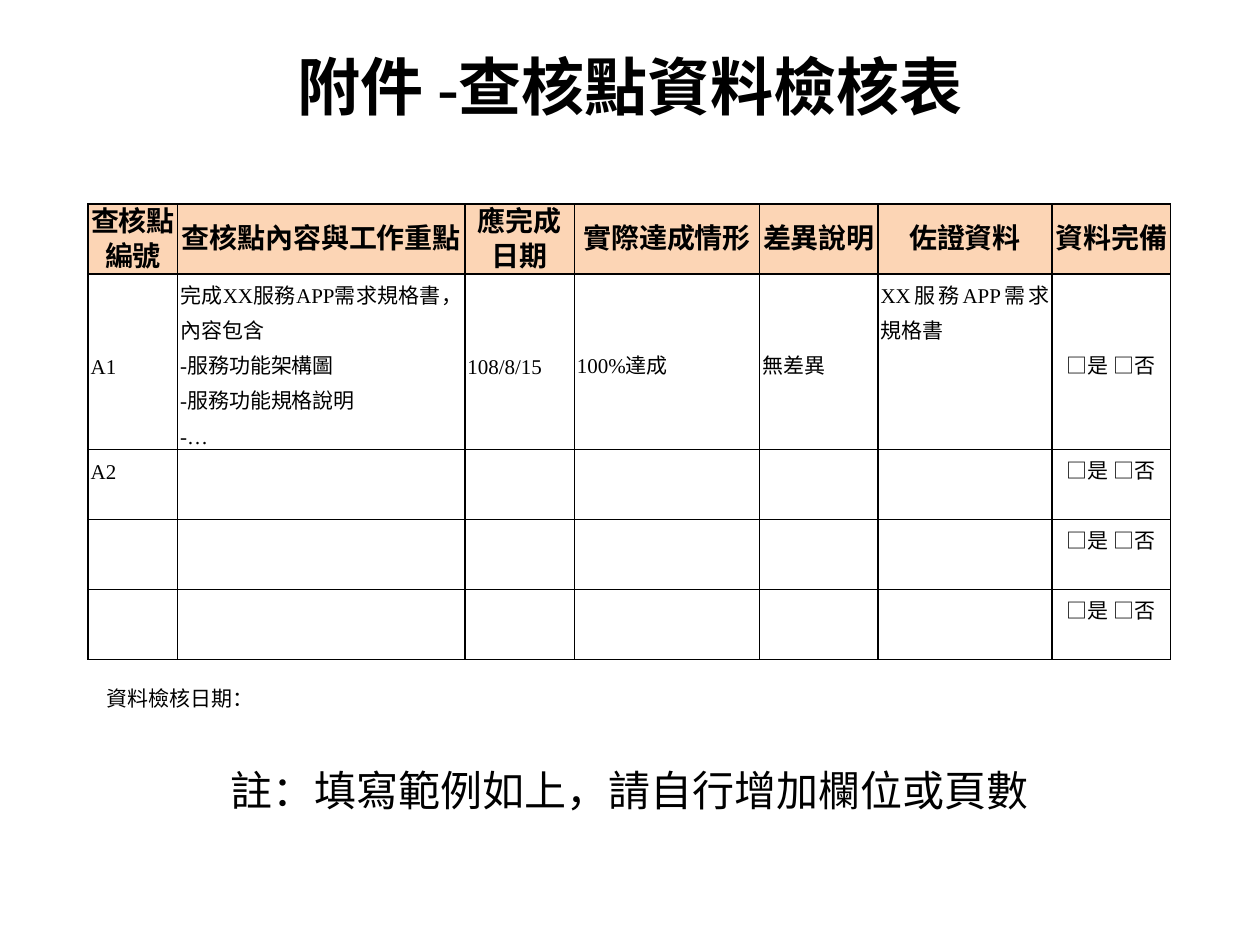
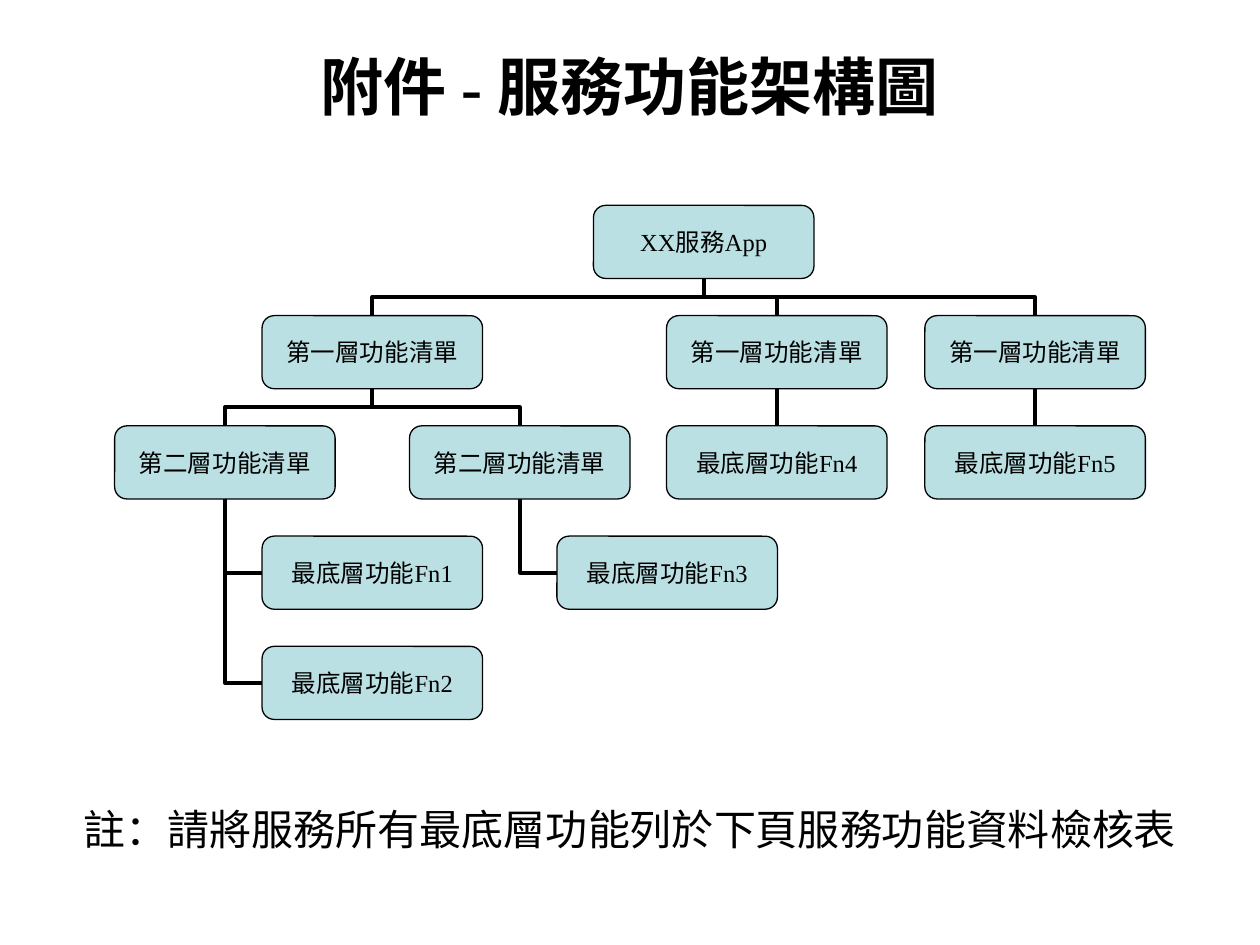
from dataclasses import dataclass

from lxml import etree
from pptx import Presentation
from pptx.dml.color import RGBColor
from pptx.enum import shapes, text
from pptx.oxml.ns import qn
from pptx.util import Inches, Pt

CENTER, LEFT, JUSTIFY = text.PP_ALIGN.CENTER, text.PP_ALIGN.LEFT, text.PP_ALIGN.JUSTIFY
TOP, MIDDLE = text.MSO_ANCHOR.TOP, text.MSO_ANCHOR.MIDDLE
SIDE_TOP, SIDE_LEFT, SIDE_BOTTOM = 0, 1, 2


@dataclass(frozen=True)
class Theme:
    ink: RGBColor = RGBColor(0, 0, 0)
    header: RGBColor = RGBColor(0xFC, 0xD5, 0xB5)
    node: RGBColor = RGBColor(0xBB, 0xE0, 0xE3)
    latin: str = "Times New Roman"
    cjk: str = "Noto Sans CJK SC"
    title: int = 36
    note: int = 24
    head: int = 16
    label: int = 14
    body: int = 12
    leading: int = 20


THEME = Theme()
TITLE_BOX = (1.26, 0.29, 7.48, 0.78)


# Shared text and slide helpers
def write(frame, lines, size, bold=False, align=CENTER, font=THEME.latin, leading=None):
    for i, line in enumerate(lines):
        paragraph = frame.paragraphs[0] if i == 0 else frame.add_paragraph()
        paragraph.alignment = align
        if leading:
            paragraph.line_spacing = Pt(leading)
        run = paragraph.add_run()
        run.text = line
        run.font.size, run.font.bold = Pt(size), bold
        run.font.color.rgb = THEME.ink
        run.font.name = font
        etree.SubElement(run.font._element, qn("a:ea"), typeface=THEME.cjk)


def set_insets(holder, x, y):
    holder.margin_left = holder.margin_right = Inches(x)
    holder.margin_top = holder.margin_bottom = Inches(y)


def add_titled_slide(prs, heading):
    slide = prs.slides.add_slide(prs.slide_layouts[5])
    title = slide.shapes.title
    title.left, title.top, title.width, title.height = map(Inches, TITLE_BOX)
    title.text_frame.auto_size = text.MSO_AUTO_SIZE.NONE
    title.text_frame.vertical_anchor = MIDDLE
    write(title.text_frame, [heading], THEME.title, bold=True)
    return slide


def add_label(slide, box, wording, size, align=CENTER, wrap=True):
    frame = slide.shapes.add_textbox(*map(Inches, box)).text_frame
    frame.word_wrap = wrap
    frame.vertical_anchor = MIDDLE
    if wrap:
        set_insets(frame, 0, 0.05)
    write(frame, [wording], size, align=align, font=THEME.cjk)


# Checkpoint table
COLUMN_WIDTHS = (0.71, 2.28, 0.87, 1.47, 0.94, 1.38, 0.94)
ROW_LINES = (2, 5, 2, 2, 2)
HEADINGS = (["查核點編號"], ["查核點內容與工作重點"], ["應完成", "日期"], ["實際達成情形"],
            ["差異說明"], ["佐證資料"], ["資料完備"])
CHOICE = ["□是 □否"]
# (row, column): lines, alignment, anchor
ENTRIES = {
    (1, 0): (["A1"], JUSTIFY, MIDDLE),
    (1, 1): (["完成XX服務APP需求規格書，內容包含", "-服務功能架構圖", "-服務功能規格說明", "-…"],
             JUSTIFY, MIDDLE),
    (1, 2): (["108/8/15"], JUSTIFY, MIDDLE),
    (1, 3): (["100%達成"], LEFT, MIDDLE),
    (1, 4): (["無差異"], JUSTIFY, MIDDLE),
    (1, 5): (["XX服務APP需求規格書"], JUSTIFY, TOP),
    (1, 6): (CHOICE, CENTER, MIDDLE),
    (2, 0): (["A2"], JUSTIFY, TOP),
    **{(row, 6): (CHOICE, CENTER, TOP) for row in (2, 3, 4)},
}


def add_borders(cell):
    properties = cell._tc.get_or_add_tcPr()
    for i, side in enumerate(("a:lnL", "a:lnR", "a:lnT", "a:lnB")):
        line = etree.Element(qn(side), w=str(Pt(1)))
        fill = etree.SubElement(line, qn("a:solidFill"))
        etree.SubElement(fill, qn("a:srgbClr"), val=str(THEME.ink))
        properties.insert(i, line)


def add_checkpoint_table(slide, box):
    table = slide.shapes.add_table(len(ROW_LINES), len(COLUMN_WIDTHS), *map(Inches, box)).table
    table.first_row = table.horz_banding = False
    for column, width in zip(table.columns, COLUMN_WIDTHS):
        column.width = Inches(width)
    for row, lines in zip(table.rows, ROW_LINES):
        row.height = Pt(THEME.leading * lines)
    for r in range(len(ROW_LINES)):
        for c in range(len(COLUMN_WIDTHS)):
            cell = table.cell(r, c)
            set_insets(cell, 0.02, 0)
            if r == 0:
                cell.fill.solid()
                cell.fill.fore_color.rgb = THEME.header
                cell.vertical_anchor = MIDDLE
                write(cell.text_frame, HEADINGS[c], THEME.head, bold=True, leading=THEME.leading)
            else:
                cell.fill.background()
            if (r, c) in ENTRIES:
                lines, align, cell.vertical_anchor = ENTRIES[r, c]
                write(cell.text_frame, lines, THEME.body, align=align, leading=THEME.leading)
            add_borders(cell)


# Function tree
NODE_WIDTH, NODE_HEIGHT, LEVEL_PITCH = 1.75, 0.58, 0.875
# key: wording, left offset, level
NODES = {
    "root": ("XX服務App", 3.8, 0),
    "first_a": ("第一層功能清單", 1.17, 1),
    "first_b": ("第一層功能清單", 4.38, 1),
    "first_c": ("第一層功能清單", 6.43, 1),
    "second_a": ("第二層功能清單", 0, 2),
    "second_b": ("第二層功能清單", 2.34, 2),
    "fn4": ("最底層功能Fn4", 4.38, 2),
    "fn5": ("最底層功能Fn5", 6.43, 2),
    "fn1": ("最底層功能Fn1", 1.17, 3),
    "fn3": ("最底層功能Fn3", 3.51, 3),
    "fn2": ("最底層功能Fn2", 1.17, 4),
}
BRANCHES = {"root": ("first_a", "first_b", "first_c"), "first_a": ("second_a", "second_b"),
            "first_b": ("fn4",), "first_c": ("fn5",)}
HANGING = {"second_a": ("fn1", "fn2"), "second_b": ("fn3",)}


def add_node(slide, left, top, wording):
    node = slide.shapes.add_shape(shapes.MSO_SHAPE.ROUNDED_RECTANGLE,
                                  *map(Inches, (left, top, NODE_WIDTH, NODE_HEIGHT)))
    node.shadow.inherit = False
    node.fill.solid()
    node.fill.fore_color.rgb = THEME.node
    node.line.color.rgb, node.line.width = THEME.ink, Pt(0.75)
    set_insets(node.text_frame, 0, 0)
    node.text_frame.vertical_anchor = MIDDLE
    write(node.text_frame, [wording], THEME.label)
    return node


def turn_downwards(link, preset):
    """Rotate an elbow so that it leaves its start vertically."""
    x1, y1, x2, y2 = link.begin_x, link.begin_y, link.end_x, link.end_y
    width, height = y2 - y1, abs(x2 - x1)
    link.left, link.top = (x1 + x2 - width) // 2, (y1 + y2 - height) // 2
    link.width, link.height = width, height
    properties = link._element.spPr
    frame = properties.find(qn("a:xfrm"))
    frame.attrib.pop("flipH", None)
    if x2 < x1:
        frame.set("rot", "5400000")
    else:
        frame.set("rot", "16200000")
        frame.set("flipH", "1")
    properties.find(qn("a:prstGeom")).set("prst", preset)


def link_nodes(slide, parent, child, side):
    straight = side == SIDE_TOP and parent.left == child.left
    kind = shapes.MSO_CONNECTOR.STRAIGHT if straight else shapes.MSO_CONNECTOR.ELBOW
    link = slide.shapes.add_connector(kind, 0, 0, 0, 0)
    link.begin_connect(parent, SIDE_BOTTOM)
    link.end_connect(child, side)
    if not straight:
        turn_downwards(link, "bentConnector3" if side == SIDE_TOP else "bentConnector2")
    link.line.color.rgb, link.line.width = THEME.ink, Pt(2.25)
    etree.SubElement(link._element.spPr, qn("a:effectLst"))


def add_function_tree(slide, left, top):
    nodes = {key: add_node(slide, left + offset, top + level * LEVEL_PITCH, wording)
             for key, (wording, offset, level) in NODES.items()}
    for family, side in ((BRANCHES, SIDE_TOP), (HANGING, SIDE_LEFT)):
        for parent, children in family.items():
            for child in children:
                link_nodes(slide, nodes[parent], nodes[child], side)


# Slides
def build_checklist_slide(prs):
    slide = add_titled_slide(prs, "附件 -查核點資料檢核表")
    add_label(slide, (1.26, 5.88, 7.48, 0.78), "註：填寫範例如上，請自行增加欄位或頁數", THEME.note)
    add_checkpoint_table(slide, (0.7, 1.62, 8.6, 3.61))
    add_label(slide, (0.75, 5.39, 1.38, 0.3), "資料檢核日期：", THEME.body, align=LEFT, wrap=False)


def build_architecture_slide(prs):
    slide = add_titled_slide(prs, "附件 - 服務功能架構圖")
    add_label(slide, (0.55, 6.19, 8.9, 0.78),
              "註：請將服務所有最底層功能列於下頁服務功能資料檢核表", THEME.note)
    add_function_tree(slide, 0.91, 1.63)


def main():
    prs = Presentation()
    prs.slide_width, prs.slide_height = Inches(10), Inches(7.5)
    build_checklist_slide(prs)
    build_architecture_slide(prs)
    prs.save("out.pptx")


if __name__ == "__main__":
    main()
